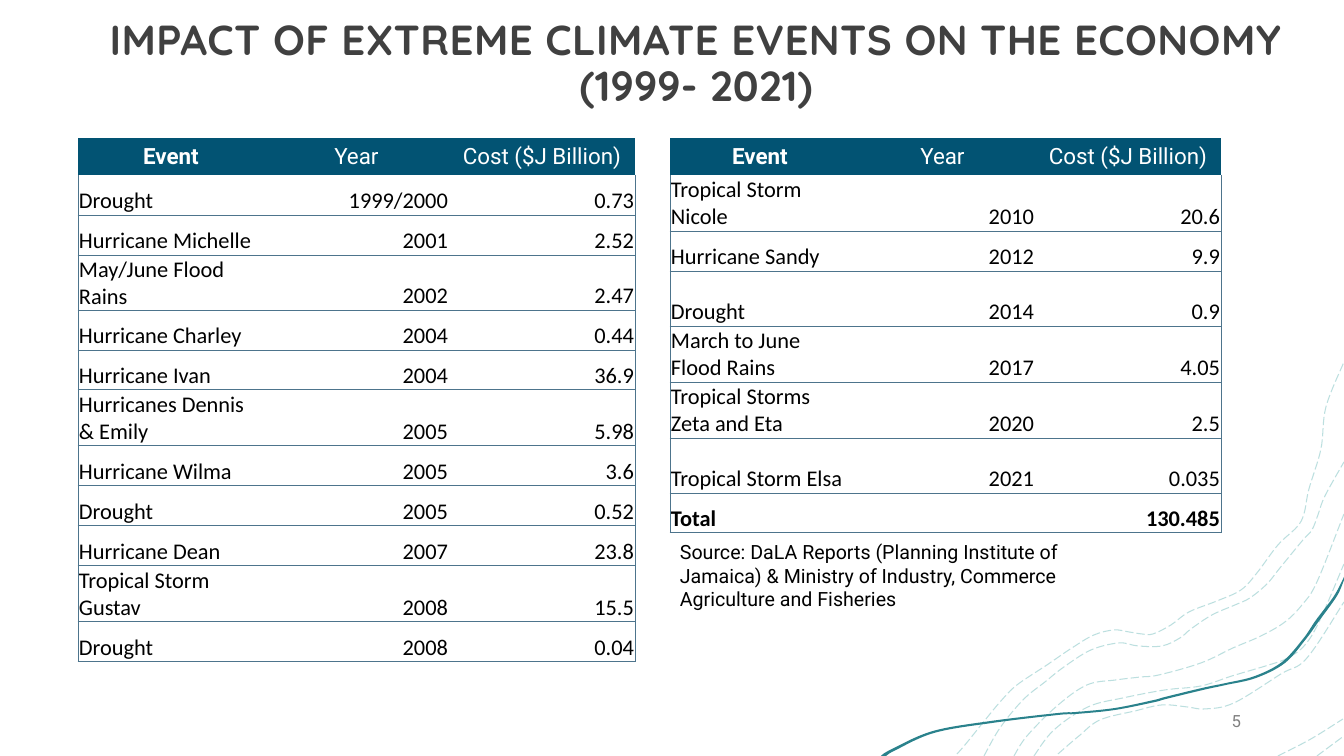
from dataclasses import dataclass

from lxml import etree
from pptx import Presentation
from pptx.dml.color import RGBColor
from pptx.enum.dml import MSO_LINE
from pptx.enum.text import MSO_ANCHOR, MSO_AUTO_SIZE, PP_ALIGN
from pptx.oxml.ns import qn
from pptx.util import Pt

LEFT, CENTER, RIGHT = PP_ALIGN.LEFT, PP_ALIGN.CENTER, PP_ALIGN.RIGHT
TOP, MIDDLE, BOTTOM = MSO_ANCHOR.TOP, MSO_ANCHOR.MIDDLE, MSO_ANCHOR.BOTTOM
NO_AUTOFIT = MSO_AUTO_SIZE.NONE
LONG_DASH = MSO_LINE.LONG_DASH
TITLE_ONLY = 5
EMU_PER_PX = 914400 / 100.8
PLAIN_TABLE_STYLE = "{2D5ABB26-0587-4C30-8999-92F81FD0307C}"


@dataclass(frozen=True)
class Theme:
    heading: str = "404040"
    header: str = "025373"
    border: str = "4D748C"
    contour: str = "41A6A6"
    ribbon: str = "2A828C"
    muted: str = "808080"
    ink: str = "000000"
    white: str = "FFFFFF"
    title_font: str = "Quicksand"
    label_font: str = "Roboto"
    data_font: str = "Calibri"
    title_size: int = 30
    table_size: int = 16
    source_size: int = 14
    number_size: int = 12


THEME = Theme()

HEADINGS = ("Event", "Year", "Cost ($J Billion)")
HEADER_HEIGHT, SHORT, TALL, WRAPPED = 37, 40, 55, 56

EARLY_EVENTS = [
    (SHORT, "Drought", "1999/2000", "0.73"),
    (SHORT, "Hurricane Michelle", "2001", "2.52"),
    (TALL, "May/June Flood Rains", "2002", "2.47"),
    (SHORT, "Hurricane Charley", "2004", "0.44"),
    (SHORT, "Hurricane Ivan", "2004", "36.9"),
    (WRAPPED, "Hurricanes Dennis & Emily", "2005", "5.98"),
    (SHORT, "Hurricane Wilma", "2005", "3.6"),
    (SHORT, "Drought", "2005", "0.52"),
    (SHORT, "Hurricane Dean", "2007", "23.8"),
    (WRAPPED, "Tropical Storm Gustav", "2008", "15.5"),
    (SHORT, "Drought", "2008", "0.04"),
]

LATE_EVENTS = [
    (WRAPPED, "Tropical Storm Nicole", "2010", "20.6"),
    (SHORT, "Hurricane Sandy", "2012", "9.9"),
    (TALL, "Drought", "2014", "0.9"),
    (WRAPPED, "March to June Flood Rains", "2017", "4.05"),
    (WRAPPED, "Tropical Storms Zeta and Eta", "2020", "2.5"),
    (TALL, "Tropical Storm Elsa", "2021", "0.035"),
    (SHORT, "Total", "", "130.485"),
]

CONTOURS = [
    [(957, 754), (965, 745), (986, 719), (1001, 701), (1017, 685), (1047, 665), (1072, 648),
     (1094, 635), (1114, 630), (1129, 632), (1142, 634), (1153, 634), (1171, 625), (1189, 612),
     (1217, 601), (1241, 590), (1257, 573), (1278, 545), (1297, 527), (1304, 514), (1309, 489),
     (1321, 449), (1326, 407), (1344, 362)],
    [(984, 756), (1000, 728), (1023, 700), (1045, 682), (1064, 667), (1091, 650), (1119, 643),
     (1138, 646), (1162, 646), (1180, 638), (1191, 629), (1212, 615), (1235, 605), (1250, 598),
     (1267, 584), (1280, 568), (1303, 540), (1312, 530), (1318, 515), (1325, 496), (1344, 462)],
    [(1317, 756), (1344, 736)],
    [(1278, 756), (1311, 739), (1343, 719)],
    [(1058, 754), (1079, 736), (1100, 720), (1135, 711), (1162, 705), (1187, 707), (1205, 709),
     (1234, 703), (1281, 674), (1307, 658), (1344, 602)],
    [(1034, 756), (1054, 730), (1088, 707), (1123, 698), (1165, 690), (1201, 686), (1232, 676),
     (1269, 665), (1288, 658), (1305, 645), (1320, 620), (1344, 564)],
    [(1014, 756), (1027, 736), (1057, 706), (1087, 685), (1116, 680), (1141, 677), (1159, 675),
     (1201, 663), (1233, 648), (1261, 636), (1285, 622), (1302, 605), (1317, 582), (1344, 514)],
]

RIBBON = [
    (1344, 580), (1337, 596), (1319, 621), (1306, 639), (1285, 663), (1256, 678), (1226, 685),
    (1203, 690), (1166, 699), (1155, 702), (1115, 710), (1076, 714), (1058, 715), (992, 723),
    (934, 733), (894, 751), (886, 756), (881, 756), (892, 749), (933, 731), (991, 721),
    (1058, 713), (1076, 712), (1115, 708), (1154, 700), (1165, 697), (1202, 688), (1226, 683),
    (1255, 676), (1282, 662), (1303, 639), (1316, 620), (1334, 596), (1344, 577),
]


def px(length):
    return round(length * EMU_PER_PX)


def rgb(color):
    return RGBColor.from_string(color)


def curve_segments(outline, points):
    left, top = outline.left, outline.top
    padded = [points[0], *points, points[-1]]
    segments = outline._element.findall(".//" + qn("a:lnTo"))
    for segment, a, b, c, d in zip(segments, padded, padded[1:], padded[2:], padded[3:]):
        first = [q + (r - p) / 6 for p, q, r in zip(a, b, c)]
        second = [r - (s - q) / 6 for q, r, s in zip(b, c, d)]
        curve = etree.Element(qn("a:cubicBezTo"))
        for x, y in (first, second, c):
            etree.SubElement(curve, qn("a:pt"), x=str(round(x - left)), y=str(round(y - top)))
        segment.getparent().replace(segment, curve)


def add_outline(slide, stops, closed):
    points = [(px(x), px(y)) for x, y in stops]
    builder = slide.shapes.build_freeform(*points[0])
    builder.add_line_segments(points[1:], close=closed)
    outline = builder.convert_to_shape()
    outline.shadow.inherit = False
    curve_segments(outline, points)
    return outline


def add_contour(slide, stops):
    contour = add_outline(slide, stops, False)
    contour.fill.background()
    contour.line.color.rgb = rgb(THEME.contour)
    contour.line.width = Pt(0.75)
    contour.line.dash_style = LONG_DASH
    tint = contour.line._get_or_add_ln().find(".//" + qn("a:srgbClr"))
    etree.SubElement(tint, qn("a:alpha"), val="35000")


def add_ribbon(slide):
    ribbon = add_outline(slide, RIBBON, True)
    ribbon.fill.solid()
    ribbon.fill.fore_color.rgb = rgb(THEME.ribbon)
    ribbon.line.fill.background()


def write(frame, text, font, size, color, align=LEFT, bold=False):
    paragraph = frame.paragraphs[0]
    paragraph.alignment = align
    run = paragraph.add_run()
    run.text = text
    run.font.name = font
    run.font.size = Pt(size)
    run.font.bold = bold
    run.font.color.rgb = rgb(color)
    return paragraph


def add_title(slide, text):
    title = slide.shapes.title
    title.left, title.top, title.width, title.height = px(92), px(-8), px(1209), px(146)
    frame = title.text_frame
    frame.auto_size = NO_AUTOFIT
    frame.vertical_anchor = MIDDLE
    heading = write(frame, text, THEME.title_font, THEME.title_size, THEME.heading, CENTER, True)
    heading.line_spacing = 0.9
    heading.runs[0].font._element.set("spc", "30")


def add_label(slide, box, text, size, color, align=LEFT, anchor=TOP):
    frame = slide.shapes.add_textbox(*map(px, box)).text_frame
    frame.word_wrap = True
    frame.vertical_anchor = anchor
    write(frame, text, THEME.label_font, size, color, align)


def add_borders(cell, sides):
    properties = cell._tc.get_or_add_tcPr()
    for side in sides:
        edge = etree.SubElement(properties, qn(f"a:ln{side}"), w=str(Pt(0.5)))
        fill = etree.SubElement(edge, qn("a:solidFill"))
        etree.SubElement(fill, qn("a:srgbClr"), val=THEME.border)


def fill_header(cell, heading, column):
    cell.vertical_anchor = MIDDLE
    cell.fill.solid()
    cell.fill.fore_color.rgb = rgb(THEME.header)
    write(cell.text_frame, heading, THEME.label_font, THEME.table_size, THEME.white,
          CENTER, column == 0)


def fill_entry(cell, entry, column, first, bold):
    cell.vertical_anchor = BOTTOM
    cell.margin_left = cell.margin_right = cell.margin_top = px(1)
    cell.margin_bottom = 0
    add_borders(cell, ("L", "", "R")[column] + ("B" if first else "TB"))
    cell.fill.background()
    if entry:
        write(cell.text_frame, entry, THEME.data_font, THEME.table_size, THEME.ink,
              RIGHT if column else LEFT, bold)


def add_event_table(slide, left, widths, events):
    heights = [HEADER_HEIGHT] + [event[0] for event in events]
    box = (left, 138, sum(widths), sum(heights))
    table = slide.shapes.add_table(len(heights), len(widths), *map(px, box)).table
    table.first_row = table.horz_banding = False
    table._tbl.tblPr.find(qn("a:tableStyleId")).text = PLAIN_TABLE_STYLE
    for column, width in zip(table.columns, widths):
        column.width = px(width)
    for row, height in zip(table.rows, heights):
        row.height = px(height)
    for column, heading in enumerate(HEADINGS):
        fill_header(table.cell(0, column), heading, column)
    for row, (_, *entries) in enumerate(events, 1):
        for column, entry in enumerate(entries):
            fill_entry(table.cell(row, column), entry, column, row == 1, entries[0] == "Total")


def main():
    deck = Presentation()
    deck.slide_width, deck.slide_height = px(1344), px(756)
    slide = deck.slides.add_slide(deck.slide_layouts[TITLE_ONLY])
    for stops in CONTOURS:
        add_contour(slide, stops)
    add_ribbon(slide)
    add_title(slide, "IMPACT OF EXTREME CLIMATE EVENTS ON THE ECONOMY (1999- 2021)")
    add_label(slide, (949, 701, 302, 40), "5", THEME.number_size, THEME.muted, RIGHT, MIDDLE)
    add_event_table(slide, 78, (186, 185, 186), EARLY_EVENTS)
    add_event_table(slide, 670, (180, 185, 186), LATE_EVENTS)
    add_label(slide, (670, 535, 456, 82),
              "Source: DaLA Reports (Planning Institute of Jamaica) & Ministry of Industry, "
              "Commerce Agriculture and Fisheries", THEME.source_size, THEME.ink)
    deck.save("out.pptx")


if __name__ == "__main__":
    main()
